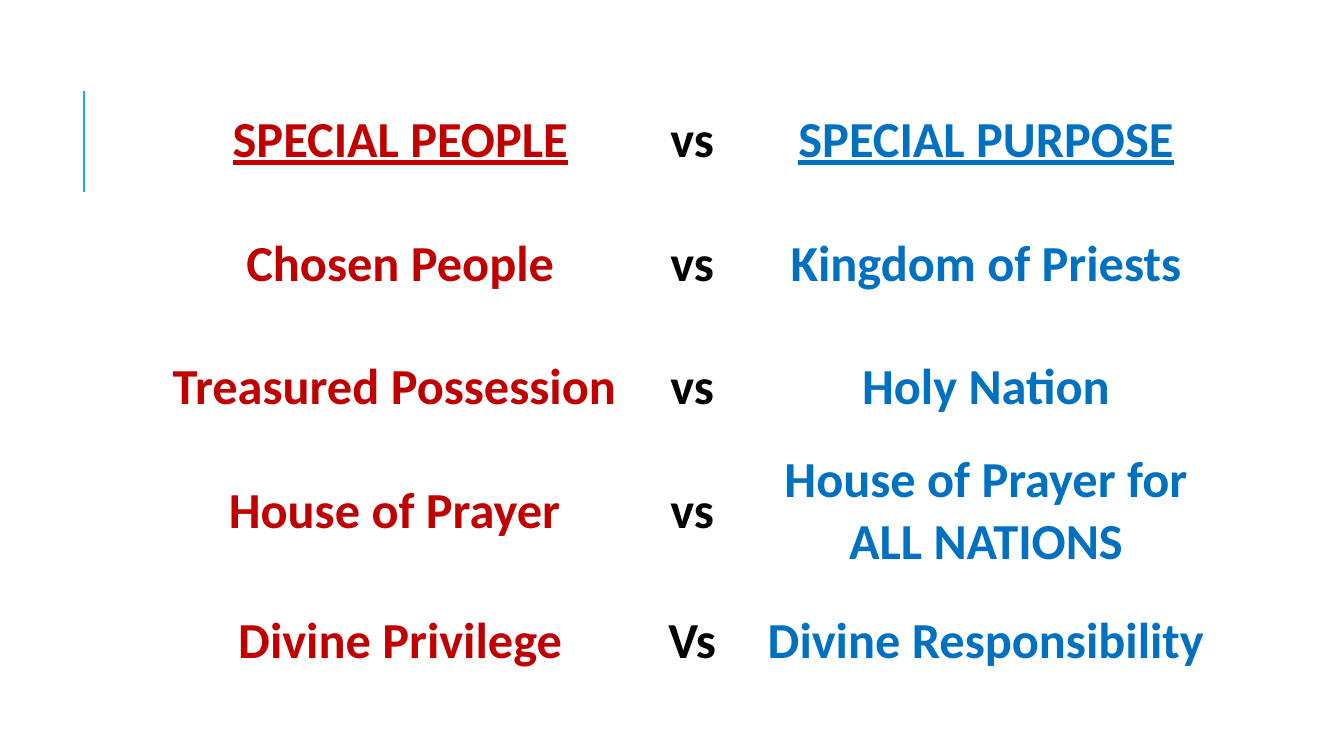
from pptx import Presentation
from pptx.dml.color import RGBColor
from pptx.enum.shapes import MSO_CONNECTOR
from pptx.enum.text import MSO_ANCHOR, PP_ALIGN
from pptx.oxml.ns import qn
from pptx.util import Inches, Pt
from lxml import etree

STRAIGHT = MSO_CONNECTOR.STRAIGHT
MIDDLE = MSO_ANCHOR.MIDDLE
CENTER = PP_ALIGN.CENTER

CONTRASTS = [
    ("SPECIAL PEOPLE", "vs", "SPECIAL PURPOSE"),
    ("Chosen People\nTreasured Possession ", "vs\nvs", "Kingdom of Priests\nHoly Nation"),
    ("House of Prayer ", "vs", "House of Prayer for ALL NATIONS"),
    ("Divine Privilege", "Vs", "Divine Responsibility"),
]
COLUMN_COLORS = ("C00000", "000000", "0070C0")
COLUMN_WIDTHS = (4.8, 0.99, 4.84)
ROW_HEIGHTS = (1.58, 2.1, 1.58, 1)
TABLE_LEFT, TABLE_TOP = 1.57, 0.6
ACCENT_X, ACCENT_TOP, ACCENT_BOTTOM = 0.83, 0.9, 1.9
PAIR_GAP = 44


def rgb(code):
    """Turn a hex string into a colour."""
    return RGBColor.from_string(code)


def add_accent(slide):
    """Draw the thin upright line beside the heading row."""
    accent = slide.shapes.add_connector(
        STRAIGHT, Inches(ACCENT_X), Inches(ACCENT_BOTTOM), Inches(ACCENT_X), Inches(ACCENT_TOP))
    accent.line.color.rgb = rgb("1CADE4")
    accent.line.width = Pt(1.5)
    etree.SubElement(accent._element.spPr, qn("a:effectLst"))


def fill_cell(cell, wording, color, underlined):
    """Write one table cell, spacing out stacked phrases."""
    cell.fill.background()
    cell.vertical_anchor = MIDDLE
    cell.text_frame.text = wording
    for order, phrase in enumerate(cell.text_frame.paragraphs):
        phrase.alignment = CENTER
        if order:
            phrase.space_before = Pt(PAIR_GAP)
        font = phrase.runs[0].font
        font.name, font.size, font.bold = "Calibri", Pt(36), True
        font.underline = underlined
        font.color.rgb = rgb(color)


def add_contrasts(slide):
    """Lay out the people and purpose table."""
    table = slide.shapes.add_table(
        len(ROW_HEIGHTS), len(COLUMN_WIDTHS), Inches(TABLE_LEFT), Inches(TABLE_TOP),
        Inches(sum(COLUMN_WIDTHS)), Inches(sum(ROW_HEIGHTS))).table
    for column, width in zip(table.columns, COLUMN_WIDTHS):
        column.width = Inches(width)
    for r, (row, height, contrast) in enumerate(zip(table.rows, ROW_HEIGHTS, CONTRASTS)):
        row.height = Inches(height)
        for c, (wording, color) in enumerate(zip(contrast, COLUMN_COLORS)):
            fill_cell(table.cell(r, c), wording, color, r == 0 and c != 1)


def main():
    """Build and save the slide."""
    deck = Presentation()
    deck.slide_width, deck.slide_height = Inches(13.33), Inches(7.5)
    slide = deck.slides.add_slide(deck.slide_layouts[6])
    add_accent(slide)
    add_contrasts(slide)
    deck.save("out.pptx")


if __name__ == "__main__":
    main()
